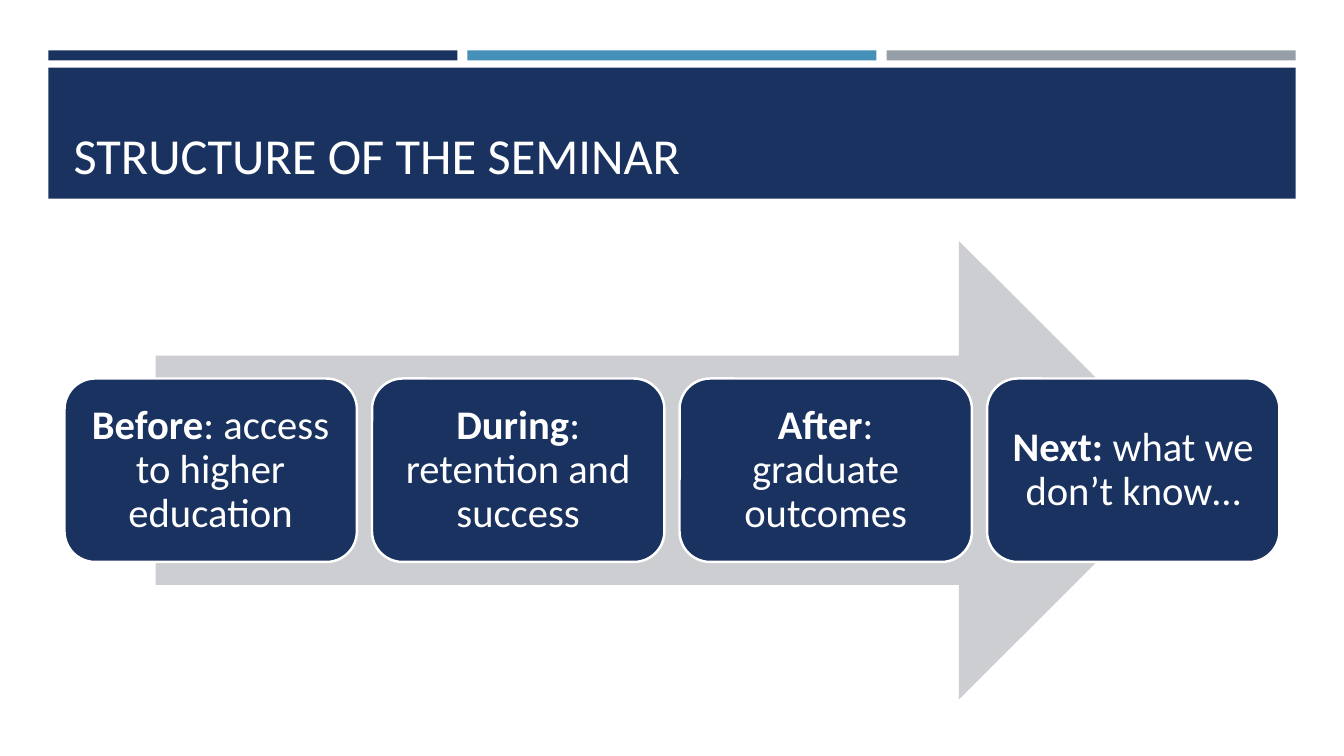
from dataclasses import dataclass
from pptx import Presentation
from pptx.dml.color import RGBColor
from pptx.enum.shapes import MSO_SHAPE
from pptx.enum.text import MSO_ANCHOR, MSO_AUTO_SIZE, PP_ALIGN
from pptx.util import Inches, Pt


@dataclass(frozen=True)
class Theme:
    """Colours, font and type sizes of the slide."""
    navy: str = "1A3260"
    blue: str = "4590B8"
    grey: str = "969FA7"
    pale: str = "CDCED2"
    white: str = "FFFFFF"
    face: str = "Calibri"
    head: int = 36
    body: int = 29


LOOK = Theme()
STEPS = [
    ("Before", ": access to higher education"),
    ("During", ": retention and success"),
    ("After", ": graduate outcomes"),
    ("Next:", " what we don’t know…"),
]


def apply(item, form):
    """Set each attribute in form on item."""
    for key, value in form.items():
        setattr(item, key, value)


def columns(box, count, gap):
    """Split box into equal columns with a gap between them."""
    left, top, width, height = box
    size = (width - gap * (count - 1)) / count
    return [(left + i * (size + gap), top, size, height) for i in range(count)]


def draw(slide, kind, box, fill, edge=None):
    """Add a flat preset shape with an optional outline."""
    shape = slide.shapes.add_shape(kind, *map(Inches, box))
    shape.shadow.inherit = False
    shape.fill.solid()
    shape.fill.fore_color.rgb = RGBColor.from_string(fill)
    if edge:
        shape.line.color.rgb = RGBColor.from_string(edge)
        shape.line.width = Pt(1.75)
    else:
        shape.line.fill.background()
    return shape


def write(para, text, size, bold=False):
    """Add a white run to a paragraph."""
    run = para.add_run()
    run.text = text
    apply(run.font, {"name": LOOK.face, "size": Pt(size), "bold": bold})
    run.font.color.rgb = RGBColor.from_string(LOOK.white)


def header(slide, box, text):
    """Place three colour bars, the title band and the title."""
    left, top, width, height = box
    bars = columns((left, top, width, 0.1), 3, 0.1)
    for bar, fill in zip(bars, (LOOK.navy, LOOK.blue, LOOK.grey)):
        draw(slide, MSO_SHAPE.RECTANGLE, bar, fill)
    band = (left, top + 0.17, width, height - 0.17)
    draw(slide, MSO_SHAPE.RECTANGLE, band, LOOK.navy)

    title = slide.shapes.title
    slide.shapes._spTree.append(title._element)
    apply(title, {
        "left": Inches(left + 0.15), "top": Inches(top + 0.27),
        "width": Inches(width - 0.3), "height": Inches(height - 0.36),
    })
    apply(title.text_frame, {
        "vertical_anchor": MSO_ANCHOR.BOTTOM,
        "auto_size": MSO_AUTO_SIZE.NONE, "word_wrap": True,
    })
    para = title.text_frame.paragraphs[0]
    para.alignment = PP_ALIGN.LEFT
    write(para, text, LOOK.head)


def process(slide, box, steps):
    """Place a wide arrow with a row of step cards across its middle."""
    left, top, width, height = box
    inset = width * 0.075
    arrow = (left + inset, top, width - 2 * inset, height)
    draw(slide, MSO_SHAPE.RIGHT_ARROW, arrow, LOOK.pale)
    row = (left, top + height * 0.3, width, height * 0.4)
    for cell, (lead, rest) in zip(columns(row, len(steps), 0.15), steps):
        card(slide, cell, lead, rest)


def card(slide, box, lead, rest):
    """Place one rounded card with a bold lead word."""
    shape = draw(slide, MSO_SHAPE.ROUNDED_RECTANGLE, box, LOOK.navy, LOOK.white)
    frame = shape.text_frame
    apply(frame, {
        "word_wrap": True, "vertical_anchor": MSO_ANCHOR.MIDDLE,
        **{f"margin_{side}": Inches(0.12)
           for side in ("left", "top", "right", "bottom")},
    })
    para = frame.paragraphs[0]
    apply(para, {"alignment": PP_ALIGN.CENTER, "line_spacing": 0.9})
    write(para, lead, LOOK.body, True)
    write(para, rest, LOOK.body)


def main():
    """Build and save the slide."""
    deck = Presentation()
    apply(deck, {"slide_width": Inches(13.33), "slide_height": Inches(7.5)})
    slide = deck.slides.add_slide(deck.slide_layouts[5])
    header(slide, (0.48, 0.5, 12.37, 1.47), "STRUCTURE OF THE SEMINAR")
    process(slide, (0.64, 2.39, 12.05, 4.55), STEPS)
    deck.save("out.pptx")


if __name__ == "__main__":
    main()
